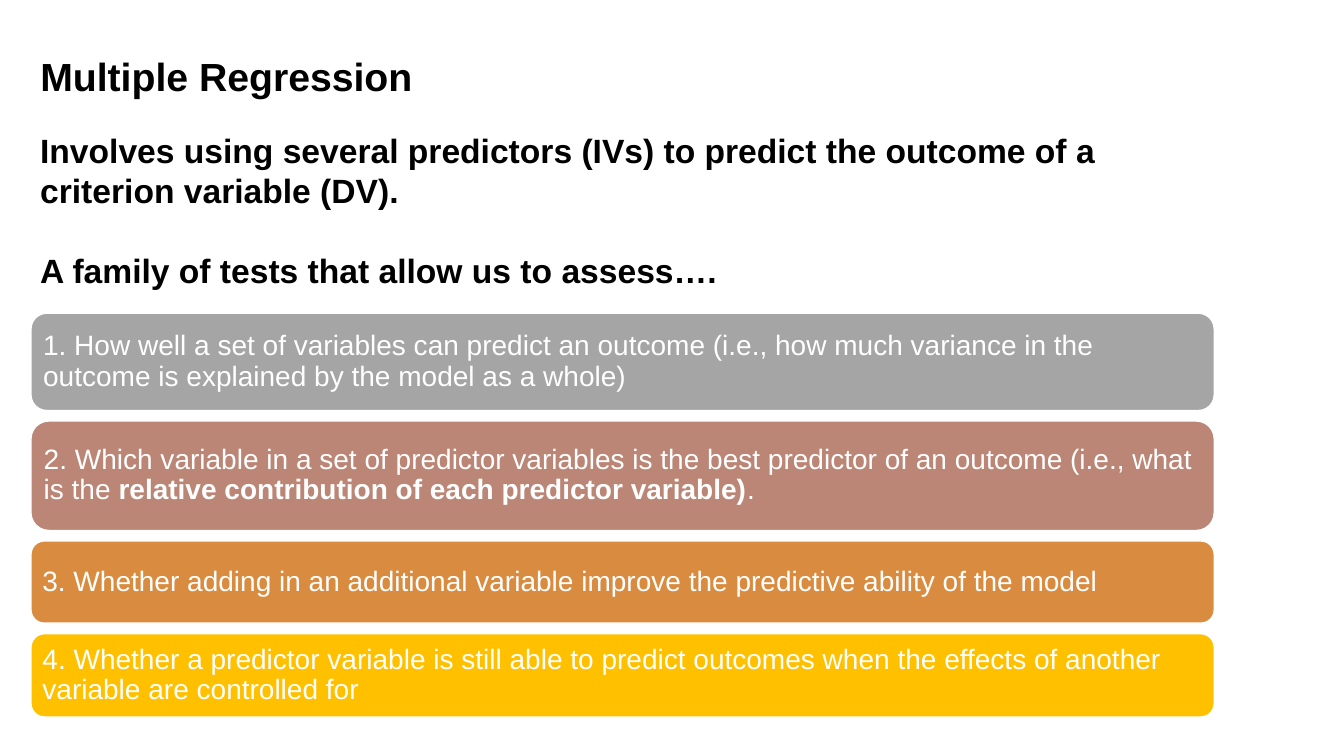
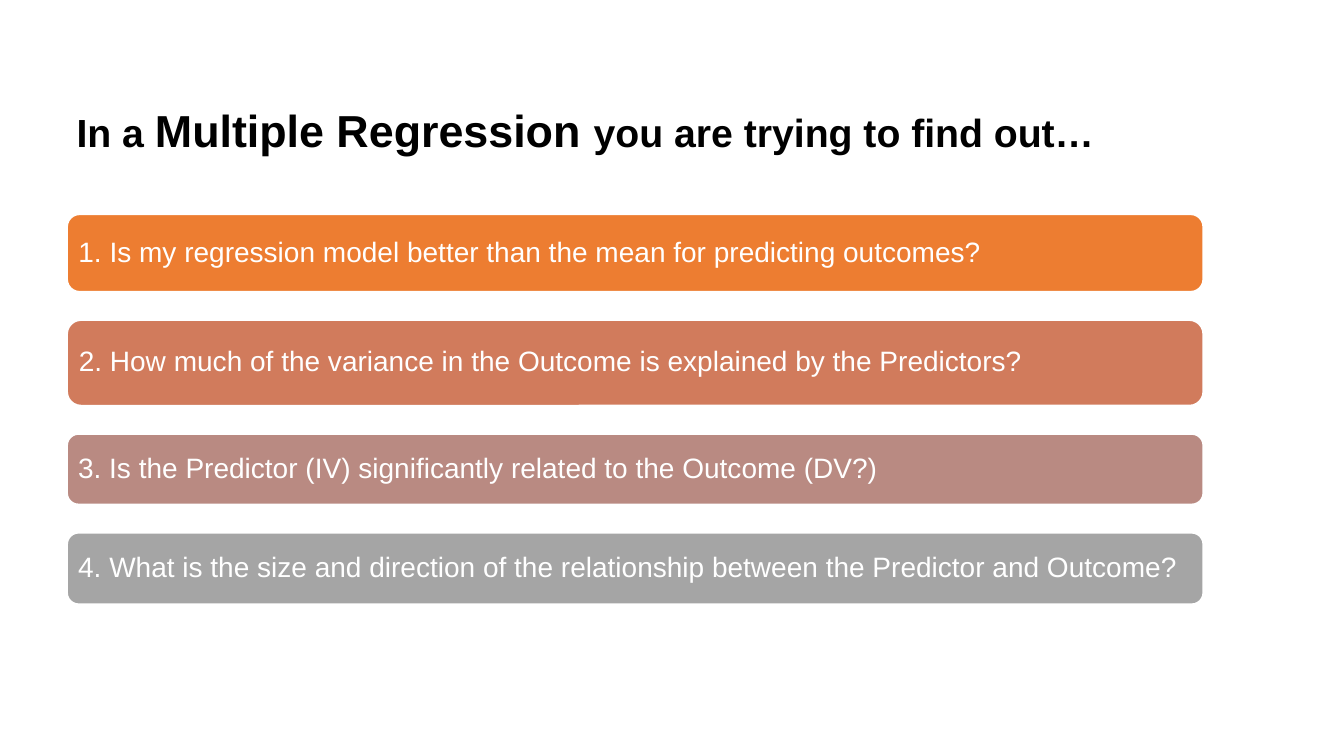
from typing import NamedTuple

from pptx import Presentation
from pptx.dml.color import RGBColor
from pptx.enum.shapes import MSO_SHAPE as Shape
from pptx.enum.text import MSO_ANCHOR as Anchor, MSO_AUTO_SIZE as AutoSize, PP_ALIGN as Align
from pptx.slide import Slide
from pptx.text.text import TextFrame
from pptx.util import Inches, Pt

BLACK = RGBColor(0x00, 0x00, 0x00)
WHITE = RGBColor(0xFF, 0xFF, 0xFF)
GRAY = RGBColor(0xA5, 0xA5, 0xA5)
ROSE = RGBColor(0xBB, 0x86, 0x76)
OCHRE = RGBColor(0xD9, 0x8C, 0x3F)
GOLD = RGBColor(0xFF, 0xC0, 0x00)
ORANGE = RGBColor(0xED, 0x7D, 0x31)
TERRACOTTA = RGBColor(0xD1, 0x7B, 0x5C)
MAUVE = RGBColor(0xB9, 0x8A, 0x82)
FONT = "Arial"


class Run(NamedTuple):
    """A stretch of text with its own size or weight."""

    text: str
    size: float | None = None
    bold: bool | None = None


class Bar(NamedTuple):
    """A coloured, numbered statement."""

    height: float
    color: RGBColor
    runs: list[Run]


def write(tf: TextFrame, paragraphs: list[list[Run]], *, size: float, color: RGBColor,
          bold: bool = False, anchor: Anchor = Anchor.TOP, line_spacing: float = 1.0,
          gap: float = 0) -> None:
    """Fill a text frame with formatted, left-aligned paragraphs."""
    tf.word_wrap = True
    tf.auto_size = AutoSize.NONE
    tf.vertical_anchor = anchor
    for i, runs in enumerate(paragraphs):
        p = tf.add_paragraph() if i else tf.paragraphs[0]
        p.alignment = Align.LEFT
        p.line_spacing = line_spacing
        p.space_before = Pt(gap if i else 0)
        for run in runs:
            r = p.add_run()
            r.text = run.text
            r.font.name = FONT
            r.font.size = Pt(run.size or size)
            r.font.bold = bold if run.bold is None else run.bold
            r.font.color.rgb = color


def set_title(s: Slide, runs: list[Run], left: float, top: float, anchor: Anchor) -> None:
    """Place and format the title placeholder."""
    sp = s.shapes.title
    sp.left, sp.top = Inches(left), Inches(top)
    sp.width, sp.height = Inches(11.28), Inches(1.02)
    write(sp.text_frame, [runs], size=28, color=BLACK, bold=True, anchor=anchor,
          line_spacing=0.9)


def add_bars(s: Slide, bars: list[Bar], left: float, top: float, width: float,
             gap: float) -> None:
    """Stack rounded bars with an equal gap between them."""
    for bar in bars:
        sp = s.shapes.add_shape(Shape.ROUNDED_RECTANGLE, Inches(left), Inches(top),
                                Inches(width), Inches(bar.height))
        sp.shadow.inherit = False
        sp.fill.solid()
        sp.fill.fore_color.rgb = bar.color
        sp.line.color.rgb = WHITE
        sp.line.width = Pt(2)
        tf = sp.text_frame
        tf.margin_left = tf.margin_right = tf.margin_top = tf.margin_bottom = Inches(0.08)
        write(tf, [bar.runs], size=20, color=WHITE, anchor=Anchor.MIDDLE, line_spacing=0.9)
        top += bar.height + gap


def add_definition_slide(prs: Presentation) -> None:
    """Build the slide that defines multiple regression."""
    s = prs.slides.add_slide(prs.slide_layouts[5])
    set_title(s, [Run("Multiple Regression")], 0.3, 0.52, Anchor.TOP)
    add_bars(s, [
        Bar(0.98, GRAY, [Run("1. How well a set of variables can predict an outcome (i.e., how much "
                             "variance in the outcome is explained by the model as a whole)")]),
        Bar(1.1, ROSE, [Run("2. Which variable in a set of predictor variables is the best "
                            "predictor of an outcome (i.e., what is the "),
                        Run("relative contribution of each predictor variable)", bold=True),
                        Run(".")]),
        Bar(0.83, OCHRE, [Run("3. Whether adding in an additional variable improve the predictive "
                              "ability of the model")]),
        Bar(0.84, GOLD, [Run("4. Whether a predictor variable is still able to predict outcomes "
                             "when the effects of another variable are controlled for")]),
    ], left=0.3, top=3.1, width=11.75, gap=0.09)
    sp = s.shapes.add_textbox(Inches(0.3), Inches(1.24), Inches(11.91), Inches(2.02))
    write(sp.text_frame, [
        [Run("Involves using several predictors (IVs) to predict the outcome of a "
             "criterion variable (DV).")],
        [Run("A family of tests that allow us to assess….")],
    ], size=24, color=BLACK, bold=True, gap=28)


def add_questions_slide(prs: Presentation) -> None:
    """Build the slide that lists the questions a regression answers."""
    s = prs.slides.add_slide(prs.slide_layouts[5])
    set_title(s, [Run("In a "), Run("Multiple Regression ", size=32),
                  Run("you are trying to find out…")], 0.66, 0.81, Anchor.MIDDLE)
    add_bars(s, [
        Bar(0.78, ORANGE, [Run("1. Is my regression model better than the mean for predicting "
                               "outcomes?")]),
        Bar(0.86, TERRACOTTA, [Run("2. How much of the variance in the Outcome is explained by "
                                   "the Predictors?")]),
        Bar(0.71, MAUVE, [Run("3. Is the Predictor (IV) significantly related to the Outcome "
                              "(DV?)")]),
        Bar(0.72, GRAY, [Run("4. What is the size and direction of the relationship between the "
                             "Predictor and Outcome?")]),
    ], left=0.66, top=2.12, width=11.28, gap=0.27)


def main() -> None:
    """Build and save the presentation."""
    prs = Presentation()
    prs.slide_width, prs.slide_height = Inches(13.33), Inches(7.5)
    add_definition_slide(prs)
    add_questions_slide(prs)
    prs.save("out.pptx")


if __name__ == "__main__":
    main()
